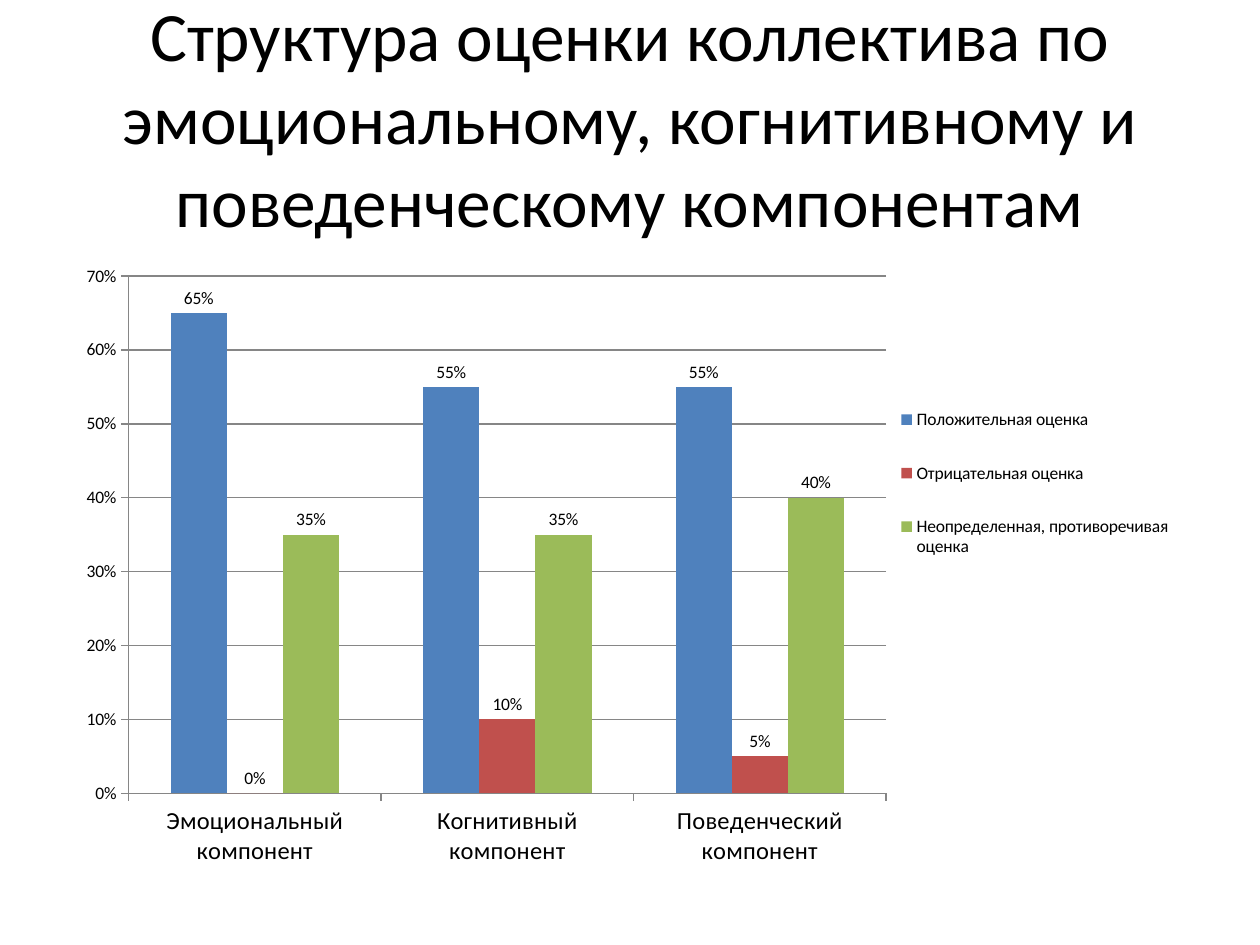
"""Build a slide with a clustered column chart of team assessment by component."""
from lxml import etree
from pptx import Presentation
from pptx import util as u
from pptx.chart.data import CategoryChartData
from pptx.dml.color import RGBColor
from pptx.enum import chart as ch, text
from pptx.oxml.ns import qn

TITLE = "Структура оценки коллектива по эмоциональному, когнитивному и поведенческому компонентам"
COMPONENTS = ["Эмоциональный компонент", "Когнитивный компонент", "Поведенческий компонент"]
SERIES = [
    ("Положительная оценка", (0.65, 0.55, 0.55), "positive"),
    ("Отрицательная оценка", (0, 0.1, 0.05), "negative"),
    ("Неопределенная, противоречивая оценка", (0.35, 0.35, 0.4), "mixed"),
]
COLORS = {"text": "000000", "line": "868686", "positive": "4F81BD",
          "negative": "C0504D", "mixed": "9BBB59"}
FONT = "Calibri"
TITLE_BOX = (63, 38, 1134, 157)
CHART_BOX = (64, 255, 1134, 624)
PLOT_BOX = (129, 276, 758, 517)
LEGEND_BOX = (889, 376, 290, 214)


def px(length):
    return round(length * 914400 / 126)


def color(name):
    return RGBColor.from_string(COLORS[name])


def style_font(font, size):
    font.name, font.size = FONT, u.Pt(size)
    font.color.rgb = color("text")


def style_line(line):
    line.color.rgb = color("line")
    line.width = u.Pt(0.75)


def set_layout(parent, box, index, inner=False):
    for old in parent.findall(qn("c:layout")):
        parent.remove(old)
    layout = etree.Element(qn("c:layout"))
    manual = etree.SubElement(layout, qn("c:manualLayout"))
    left, top, width, height = CHART_BOX
    values = [("xMode", "edge"), ("yMode", "edge"),
              ("x", round((box[0] - left) / width, 3)), ("y", round((box[1] - top) / height, 3)),
              ("w", round(box[2] / width, 3)), ("h", round(box[3] / height, 3))]
    if inner:
        values.insert(0, ("layoutTarget", "inner"))
    for tag, value in values:
        etree.SubElement(manual, qn("c:" + tag)).set("val", str(value))
    parent.insert(index, layout)


def add_title(page):
    title = page.shapes.title
    title.left, title.top, title.width, title.height = map(px, TITLE_BOX)
    frame = title.text_frame
    frame.word_wrap = True
    frame.auto_size = text.MSO_AUTO_SIZE.NONE
    frame.vertical_anchor = text.MSO_ANCHOR.MIDDLE
    para = frame.paragraphs[0]
    para.alignment = text.PP_ALIGN.CENTER
    span = para.add_run()
    span.text = TITLE
    style_font(span.font, 39.6)


def add_columns(page):
    data = CategoryChartData(number_format="0%")
    data.categories = COMPONENTS
    for name, values, _ in SERIES:
        data.add_series(name, values)
    chart = page.shapes.add_chart(
        ch.XL_CHART_TYPE.COLUMN_CLUSTERED, *map(px, CHART_BOX), data).chart
    chart.has_title = False
    style_font(chart.font, 10)

    for axis, size in ((chart.category_axis, 14), (chart.value_axis, 10)):
        axis.major_tick_mark = ch.XL_TICK_MARK.OUTSIDE
        style_font(axis.tick_labels.font, size)
        style_line(axis.format.line)
    scale = chart.value_axis
    scale.minimum_scale, scale.maximum_scale, scale.major_unit = 0, 0.7, 0.1
    scale.tick_labels.number_format = "0%"
    scale.tick_labels.number_format_is_linked = False
    style_line(scale.major_gridlines.format.line)

    plot = chart.plots[0]
    plot.gap_width, plot.overlap, plot.vary_by_categories = 150, 0, False
    for series, (_, _, shade) in zip(plot.series, SERIES):
        series.format.fill.solid()
        series.format.fill.fore_color.rgb = color(shade)
        labels = series.data_labels
        labels.show_value = True
        labels.number_format, labels.number_format_is_linked = "0%", False
        labels.position = ch.XL_LABEL_POSITION.OUTSIDE_END
        style_font(labels.font, 10)

    chart.has_legend = True
    legend = chart.legend
    legend.position = ch.XL_LEGEND_POSITION.RIGHT
    legend.include_in_layout = False
    style_font(legend.font, 10)
    area = chart.element.find(".//" + qn("c:plotArea"))
    set_layout(area, PLOT_BOX, 0, inner=True)
    set_layout(chart.element.find(".//" + qn("c:legend")), LEGEND_BOX, 1)


def main():
    deck = Presentation()
    deck.slide_width, deck.slide_height = px(1260), px(945)
    page = deck.slides.add_slide(deck.slide_layouts[5])
    add_title(page)
    add_columns(page)
    deck.save("out.pptx")


if __name__ == "__main__":
    main()
